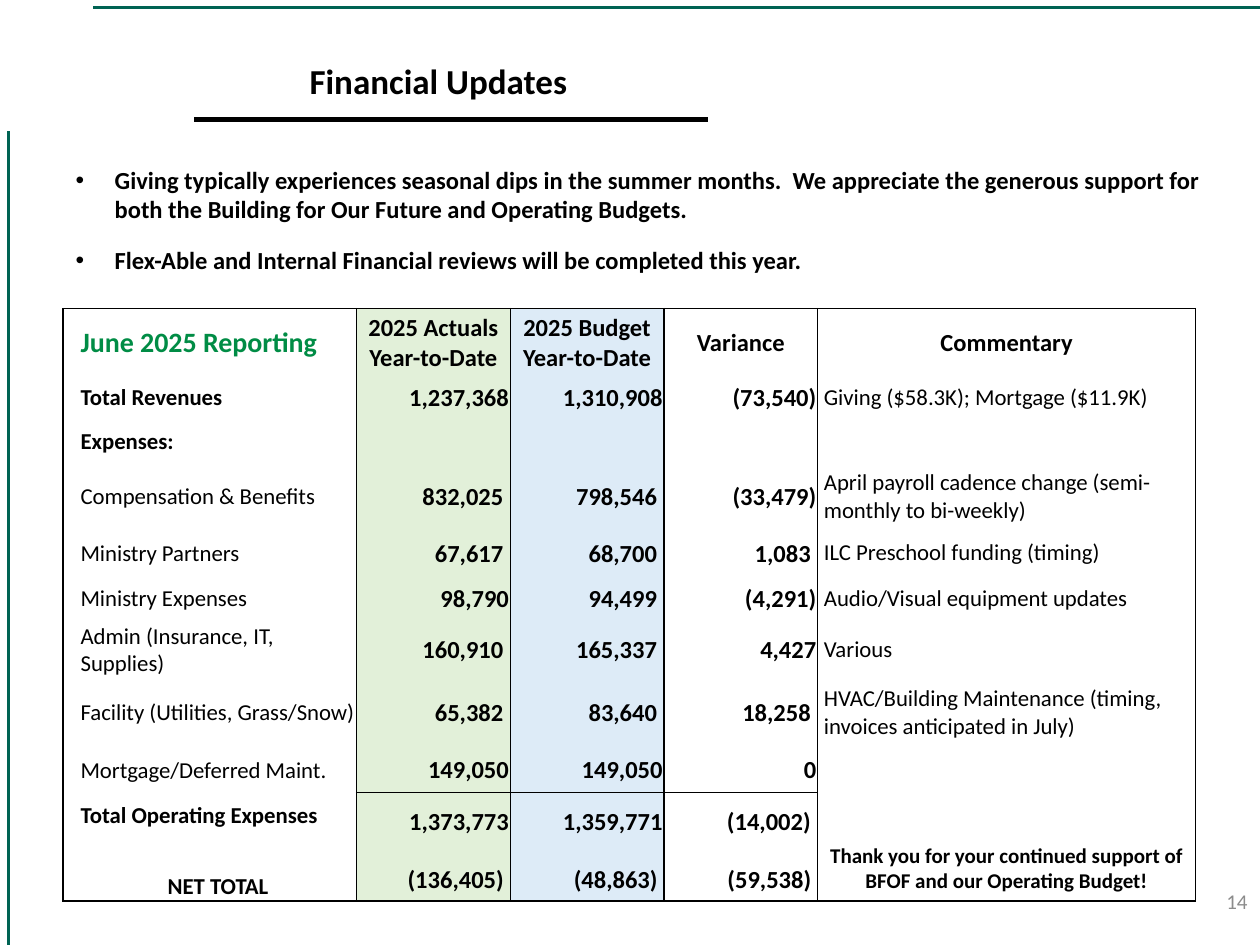
from dataclasses import dataclass

from lxml import etree
from pptx import Presentation
from pptx.dml.color import RGBColor
from pptx.enum.text import MSO_ANCHOR, MSO_AUTO_SIZE, PP_ALIGN
from pptx.oxml.ns import qn
from pptx.util import Inches, Pt

LEFT, CENTER, RIGHT = PP_ALIGN.LEFT, PP_ALIGN.CENTER, PP_ALIGN.RIGHT
TOP, MIDDLE, BOTTOM = MSO_ANCHOR.TOP, MSO_ANCHOR.MIDDLE, MSO_ANCHOR.BOTTOM


@dataclass(frozen=True)
class Theme:
    font: str = "Calibri"
    text: str = "000000"
    accent: str = "006353"
    heading: str = "008C45"
    muted: str = "8C8C8C"
    actuals_fill: str = "E2F0D9"
    budget_fill: str = "DDEBF7"
    title_size: int = 20
    heading_size: int = 16
    body_size: int = 14
    label_size: int = 13
    small_size: int = 12


THEME = Theme()
BULLETS = [
    "Giving typically experiences seasonal dips in the summer months.  We appreciate "
    "the generous support for both the Building for Our Future and Operating Budgets.",
    "Flex-Able and Internal Financial reviews will be completed this year.",
]
COLUMN_WIDTHS = [0.13, 2.2, 1.22, 1.22, 1.22, 3]
ROW_HEIGHTS = [0.53, 0.35, 0.34, 0.52, 0.36, 0.36, 0.44, 0.55, 0.36, 0.35, 0.51]
# A trailing space keeps figures in line with those closed by a parenthesis.
REPORT = [
    ["June 2025 Reporting", "2025 Actuals Year-to-Date", "2025 Budget\nYear-to-Date",
     "Variance", "Commentary"],
    ["Total Revenues", "1,237,368", "1,310,908", "(73,540)",
     "Giving ($58.3K); Mortgage ($11.9K)"],
    ["Expenses:", "", "", "", ""],
    ["Compensation & Benefits", "832,025 ", "798,546 ", "(33,479)",
     "April payroll cadence change (semi-monthly to bi-weekly)"],
    ["Ministry Partners", "67,617 ", "68,700 ", "1,083 ", "ILC Preschool funding (timing)"],
    ["Ministry Expenses", "98,790", "94,499 ", "(4,291)", "Audio/Visual equipment updates"],
    ["Admin (Insurance, IT, Supplies)", "160,910 ", "165,337 ", "4,427", "Various"],
    ["Facility (Utilities, Grass/Snow)", "65,382 ", "83,640 ", "18,258 ",
     "HVAC/Building Maintenance (timing, invoices anticipated in July)"],
    ["Mortgage/Deferred Maint.", "149,050", "149,050", "0", ""],
    ["Total Operating Expenses", "1,373,773", "1,359,771", "(14,002) ", ""],
    ["NET TOTAL", "(136,405)", "(48,863)", "(59,538)",
     "Thank you for your continued support of BFOF and our Operating Budget!"],
]
LABEL, ACTUALS, BUDGET, VARIANCE, COMMENTARY = range(1, 6)
FIGURES = (ACTUALS, BUDGET, VARIANCE)
HEADER, TOTAL, NET = 0, len(REPORT) - 2, len(REPORT) - 1
BOLD_LABELS = (HEADER, 1, 2, TOTAL, NET)


def format_paragraph(paragraph, size, color=THEME.text, bold=False, align=LEFT):
    paragraph.alignment = align
    font = paragraph.font
    font.name, font.size, font.bold = THEME.font, Pt(size), bold
    font.color.rgb = RGBColor.from_string(color)


def place(shape, box):
    shape.left, shape.top, shape.width, shape.height = map(Inches, box)
    frame = shape.text_frame
    frame.word_wrap = True
    frame.auto_size = MSO_AUTO_SIZE.NONE
    return frame


def add_line(slide, start, end, color, width):
    line = slide.shapes.add_connector(1, *map(Inches, (*start, *end)))
    line.line.color.rgb = RGBColor.from_string(color)
    line.line.width = Pt(width)
    etree.SubElement(line._element.spPr, qn("a:effectLst"))


def add_page_frame(slide, width, height):
    add_line(slide, (0.74, 0.06), (width, 0.06), THEME.accent, 1.5)
    add_line(slide, (0.07, 1.04), (0.07, height), THEME.accent, 1.5)


def add_title(slide, box):
    left, top, width, height = box
    frame = place(slide.shapes.title, box)
    frame.vertical_anchor = TOP
    frame.text = "Financial Updates"
    format_paragraph(frame.paragraphs[0], THEME.title_size, bold=True, align=CENTER)
    rule_top = top + height + 0.09
    add_line(slide, (left - 0.26, rule_top), (left + width + 0.46, rule_top), THEME.text, 3)


def add_bullets(slide, box):
    frame = place(slide.placeholders[1], box)
    frame.text = "\n".join(BULLETS)
    for paragraph in frame.paragraphs:
        properties = paragraph._p.get_or_add_pPr()
        properties.set("marL", str(Inches(0.31)))
        properties.set("indent", str(-Inches(0.31)))
        etree.SubElement(properties, qn("a:buChar"), char="•")
        paragraph.space_before, paragraph.space_after = Pt(0), Pt(12)
        format_paragraph(paragraph, THEME.body_size, bold=True)


def set_borders(cell, sides):
    """Draw the named sides (L, R, T, B) and clear the others."""
    properties = cell._tc.get_or_add_tcPr()
    for side in "LRTB":
        border = etree.SubElement(properties, qn(f"a:ln{side}"), w=str(Pt(1)))
        if side in sides:
            fill = etree.SubElement(border, qn("a:solidFill"))
            etree.SubElement(fill, qn("a:srgbClr"), val=THEME.text)
        else:
            etree.SubElement(border, qn("a:noFill"))


def border_sides(row, column):
    sides = "R" if column else "L"
    if column > LABEL:
        sides += "L"
    if row == HEADER or (row == TOTAL and column in FIGURES):
        sides += "T"
    if row == NET or (row == TOTAL - 1 and column in FIGURES):
        sides += "B"
    return sides


def text_style(row, column):
    """Return the size, colour, weight and alignment of a report cell."""
    if column == LABEL:
        if row == HEADER:
            return THEME.heading_size, THEME.heading, True, LEFT
        align = CENTER if row == NET else LEFT
        return THEME.label_size, THEME.text, row in BOLD_LABELS, align
    if row == HEADER:
        return THEME.body_size, THEME.text, True, CENTER
    if column in FIGURES:
        return THEME.body_size, THEME.text, True, RIGHT
    if row == NET:
        return THEME.small_size, THEME.text, True, CENTER
    return THEME.label_size, THEME.text, False, LEFT


def format_cell(cell, row, column, text):
    set_borders(cell, border_sides(row, column))
    fill = {ACTUALS: THEME.actuals_fill, BUDGET: THEME.budget_fill}.get(column)
    if fill:
        cell.fill.solid()
        cell.fill.fore_color.rgb = RGBColor.from_string(fill)
    else:
        cell.fill.background()
    padded = text and row != HEADER and (
        column == COMMENTARY or (row == NET and column in FIGURES))
    margin = Inches(0.05 if padded else 0.01)
    cell.margin_left = cell.margin_right = cell.margin_top = margin
    cell.margin_bottom = margin if padded else 0
    on_base = (row == TOTAL and column in FIGURES) or (row == NET and column != COMMENTARY)
    cell.vertical_anchor = BOTTOM if on_base else MIDDLE
    cell.text = text
    for paragraph in cell.text_frame.paragraphs:
        format_paragraph(paragraph, *text_style(row, column))


def add_report(slide, box):
    frame = slide.shapes.add_table(len(REPORT), len(COLUMN_WIDTHS), *map(Inches, box))
    table = frame.table
    table.first_row = table.horz_banding = False
    for column, width in zip(table.columns, COLUMN_WIDTHS):
        column.width = Inches(width)
    for row, height in zip(table.rows, ROW_HEIGHTS):
        row.height = Inches(height)
    for row, texts in enumerate(REPORT):
        for column, text in enumerate(["", *texts]):
            format_cell(table.cell(row, column), row, column, text)


def add_page_number(slide, box):
    frame = place(slide.shapes.add_textbox(0, 0, 0, 0), box)
    frame.vertical_anchor = MIDDLE
    frame.text = "14"
    format_paragraph(frame.paragraphs[0], THEME.small_size, THEME.muted, align=RIGHT)


def main():
    presentation = Presentation()
    presentation.slide_width, presentation.slide_height = Inches(10), Inches(7.5)
    slide = presentation.slides.add_slide(presentation.slide_layouts[1])
    add_page_frame(slide, 10, 7.5)
    add_report(slide, (0.5, 2.45, sum(COLUMN_WIDTHS), sum(ROW_HEIGHTS)))
    add_bullets(slide, (0.5, 1.26, 9.29, 0.98))
    add_title(slide, (1.8, 0.42, 3.36, 0.44))
    add_page_number(slide, (7.75, 6.95, 2.25, 0.4))
    presentation.save("out.pptx")


if __name__ == "__main__":
    main()
